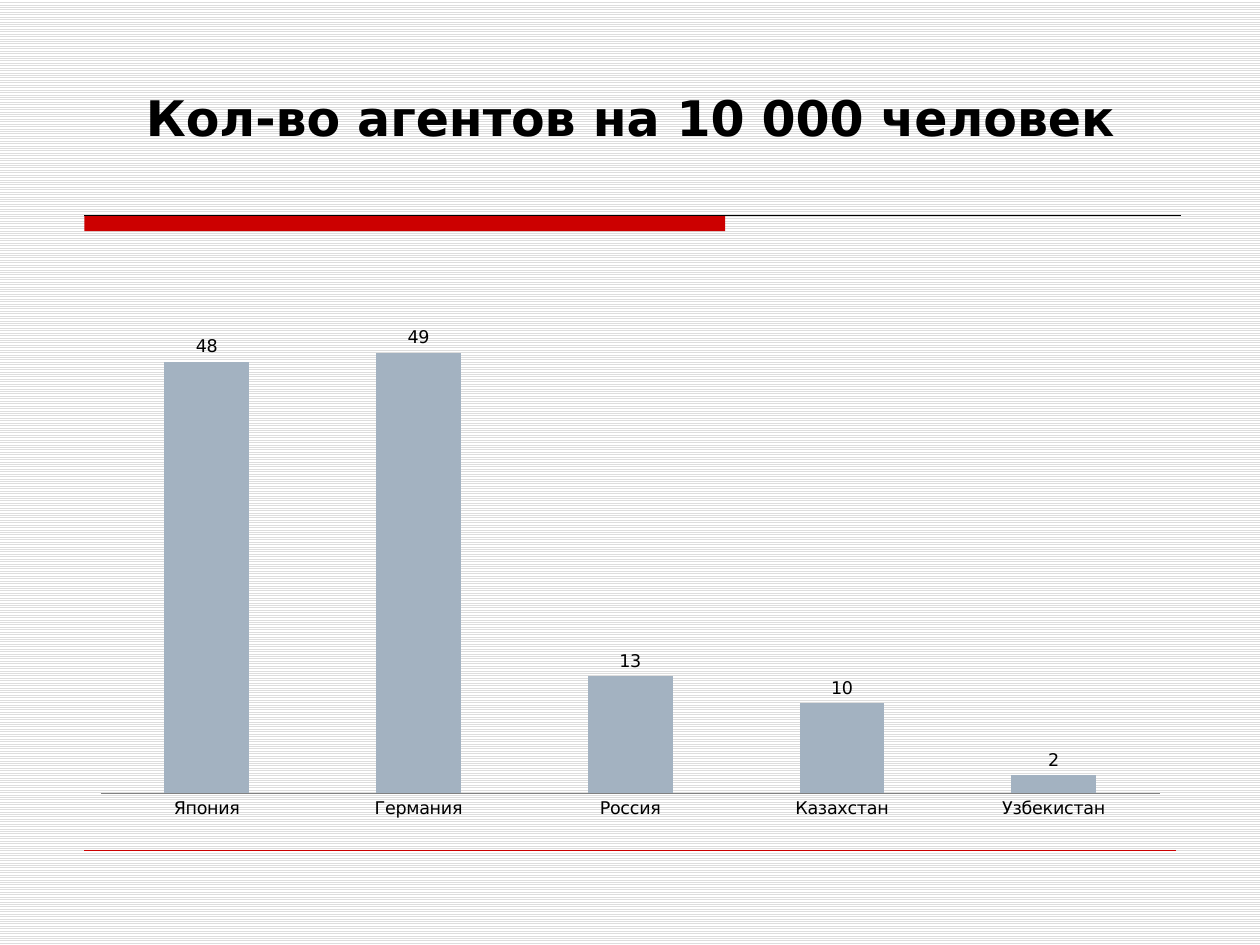
from dataclasses import dataclass

from lxml import etree
from pptx import Presentation
from pptx import util as u
from pptx.chart.data import CategoryChartData
from pptx.dml.color import RGBColor
from pptx.enum import chart as ch, dml, shapes, text
from pptx.oxml.ns import qn


@dataclass(frozen=True)
class Theme:
    font: str = "DejaVu Sans"
    ink: str = "000000"
    red: str = "CC0000"
    bar: str = "A3B2C1"
    axis: str = "808080"
    paper: str = "FFFFFF"
    stripe: str = "DDDDDD"
    head: int = 28
    label: int = 10


def rgb(code):
    return RGBColor.from_string(code)


def put(item, values):
    """Set each named attribute of item."""
    for name, value in values.items():
        setattr(item, name, value)


class Deck:
    """Style and current slide, with one method per kind of element."""

    def __init__(self, theme):
        self.theme = theme
        self.file = Presentation()
        put(self.file, {"slide_width": u.Cm(25.4), "slide_height": u.Cm(19.05)})
        self.slide = self.file.slides.add_slide(self.file.slide_layouts[6])

    def type(self, font, size, bold=False):
        put(font, {"name": self.theme.font, "size": u.Pt(size), "bold": bold})
        font.color.rgb = rgb(self.theme.ink)

    def paper(self):
        fill = self.slide.background.fill
        fill.patterned()
        fill.pattern = dml.MSO_PATTERN.LIGHT_HORIZONTAL
        fill.fore_color.rgb = rgb(self.theme.stripe)
        fill.back_color.rgb = rgb(self.theme.paper)

    def block(self, box, color):
        shape = self.slide.shapes.add_shape(
            shapes.MSO_SHAPE.RECTANGLE, *map(u.Cm, box))
        shape.shadow.inherit = False
        shape.fill.solid()
        shape.fill.fore_color.rgb = rgb(color)
        shape.line.fill.background()

    def rule(self, left, right, top, color, width):
        """Draw a level line."""
        line = self.slide.shapes.add_connector(
            shapes.MSO_CONNECTOR.STRAIGHT, *map(u.Cm, (left, top, right, top)))
        line.line.color.rgb = rgb(color)
        line.line.width = u.Pt(width)
        etree.SubElement(line._element.spPr, qn("a:effectLst"))

    def title(self, box, words, foot):
        """Add a bottom-set heading, held foot cm above the box edge."""
        frame = self.slide.shapes.add_textbox(*map(u.Cm, box)).text_frame
        put(frame, {"word_wrap": True, "margin_bottom": u.Cm(foot),
                    "vertical_anchor": text.MSO_ANCHOR.BOTTOM})
        para = frame.paragraphs[0]
        para.alignment = text.PP_ALIGN.CENTER
        run = para.add_run()
        run.text = words
        self.type(run.font, self.theme.head, bold=True)

    def chart(self, box, name, data, top):
        """Add a column chart with values above the bars."""
        table = CategoryChartData()
        table.categories = list(data)
        table.add_series(name, list(data.values()))
        chart = self.slide.shapes.add_chart(
            ch.XL_CHART_TYPE.COLUMN_CLUSTERED, *map(u.Cm, box), table).chart
        put(chart, {"has_legend": False, "has_title": False})
        self.type(chart.font, self.theme.label)

        plot = chart.plots[0]
        put(plot, {"gap_width": 150, "overlap": -25,
                   "vary_by_categories": False, "has_data_labels": True})
        put(plot.data_labels, {"show_value": True,
                               "position": ch.XL_LABEL_POSITION.OUTSIDE_END})
        self.type(plot.data_labels.font, self.theme.label)
        fill = plot.series[0].format.fill
        fill.solid()
        fill.fore_color.rgb = rgb(self.theme.bar)

        put(chart.value_axis, {"visible": False, "has_major_gridlines": False,
                               "minimum_scale": 0, "maximum_scale": top})
        axis = chart.category_axis
        put(axis, {"major_tick_mark": ch.XL_TICK_MARK.NONE,
                   "minor_tick_mark": ch.XL_TICK_MARK.NONE})
        axis.format.line.color.rgb = rgb(self.theme.axis)
        axis.format.line.width = u.Pt(1)


def main():
    theme = Theme()
    deck = Deck(theme)
    left, wide = 1.59, 22.23
    edge, bar = 1.7, 4.34

    deck.paper()
    deck.block((edge, bar, 12.92, 0.32), theme.red)
    deck.rule(edge, 23.8, bar, theme.ink, 0.75)
    deck.rule(edge, 23.7, 17.15, theme.red, 0.25)
    deck.title((left, 0.85, wide, 3.38), "Кол-во агентов на 10 000 человек", 1.28)
    agents = {"Япония": 48, "Германия": 49, "Россия": 13,
              "Казахстан": 10, "Узбекистан": 2}
    deck.chart((left, 4.88, wide, 11.85), "Series 1", agents, 60)
    deck.file.save("out.pptx")


if __name__ == "__main__":
    main()
